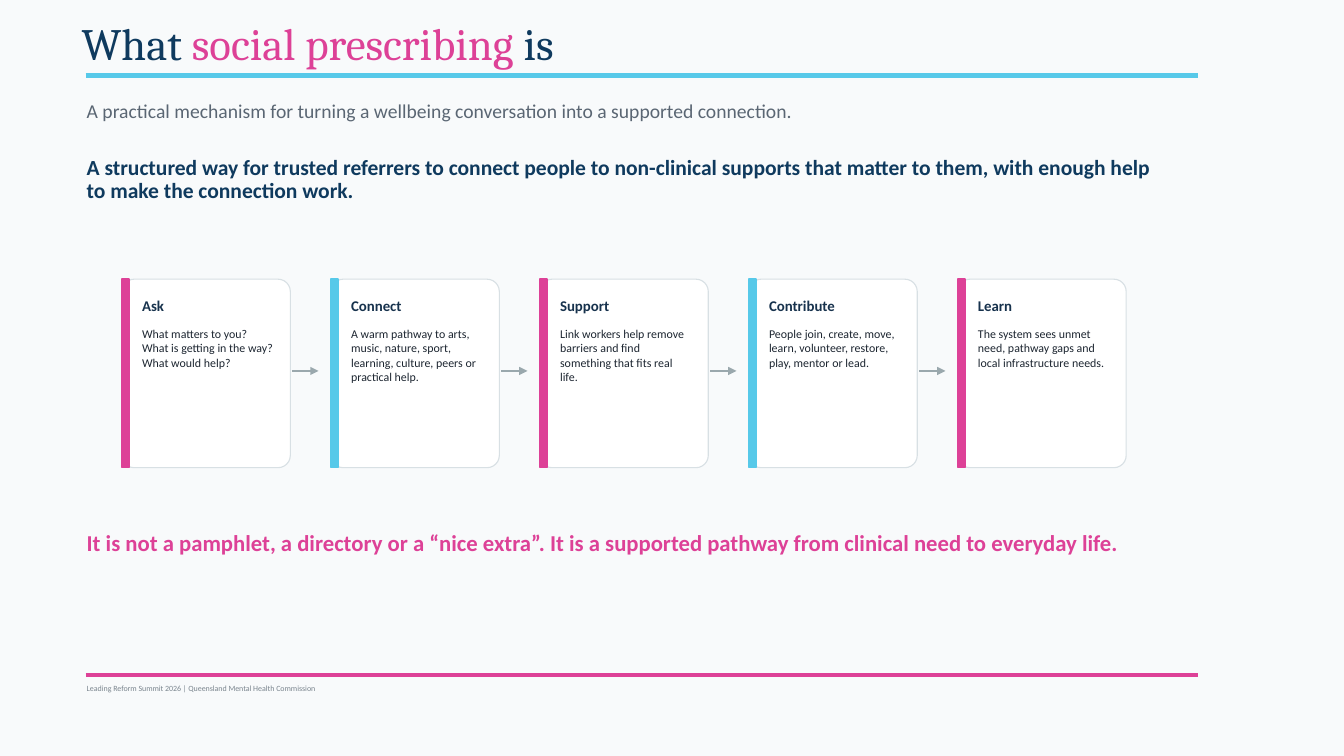
from dataclasses import dataclass

from lxml import etree
from pptx import Presentation
from pptx.dml.color import RGBColor
from pptx.enum.shapes import MSO_CONNECTOR, MSO_SHAPE
from pptx.enum.text import MSO_ANCHOR, MSO_AUTO_SIZE, PP_ALIGN
from pptx.oxml.ns import qn
from pptx.slide import Slide
from pptx.util import Inches, Pt

TOP = MSO_ANCHOR.TOP
MIDDLE = MSO_ANCHOR.MIDDLE
LEFT = PP_ALIGN.LEFT
NO_AUTOFIT = MSO_AUTO_SIZE.NONE
STRAIGHT = MSO_CONNECTOR.STRAIGHT
RECT = MSO_SHAPE.RECTANGLE
ROUND_RECT = MSO_SHAPE.ROUNDED_RECTANGLE


@dataclass(frozen=True)
class Style:
    size: float
    color: str
    bold: bool = False
    spacing: float = 1.0


@dataclass(frozen=True)
class Theme:
    heading_font: str = "Cambria"
    body_font: str = "Calibri"
    background: str = "F8FAFB"
    navy: str = "0F3A5E"
    pink: str = "DD4197"
    cyan: str = "57C9E9"
    card_fill: str = "FFFFFF"
    card_line: str = "D8E0E4"
    arrow: str = "9AA8AD"
    title_size: float = 32
    subtitle: Style = Style(14, "5A6673")
    definition: Style = Style(15.4, "0F3A5E", True, 0.9)
    card_title: Style = Style(10.6, "17324D", True)
    card_body: Style = Style(8.5, "1C2530")
    takeaway: Style = Style(16.2, "DD4197", True)
    footer: Style = Style(5.7, "7A858E")


@dataclass(frozen=True)
class Box:
    left: float
    top: float
    width: float
    height: float

    def emu(self) -> tuple[int, ...]:
        return tuple(Inches(v) for v in (self.left, self.top, self.width, self.height))


@dataclass(frozen=True)
class Step:
    title: str
    body: str


THEME = Theme()
STEPS = [
    Step("Ask", "What matters to you? What is getting in the way? What would help?"),
    Step("Connect", "A warm pathway to arts, music, nature, sport, learning, culture, "
                    "peers or practical help."),
    Step("Support", "Link workers help remove barriers and find something that fits "
                    "real life."),
    Step("Contribute", "People join, create, move, learn, volunteer, restore, play, "
                       "mentor or lead."),
    Step("Learn", "The system sees unmet need, pathway gaps and local infrastructure "
                  "needs."),
]
FIRST_LEFT, LAST_LEFT = 1.21, 9.5
PITCH = (LAST_LEFT - FIRST_LEFT) / (len(STEPS) - 1)
CARD_TOP, CARD_WIDTH, CARD_HEIGHT = 2.77, 1.67, 1.87
ARROW_Y = 3.68


def rgb(color: str) -> RGBColor:
    return RGBColor.from_string(color)


def add_text(s: Slide, box: Box, text: str, style: Style,
             anchor: MSO_ANCHOR = MIDDLE) -> None:
    tf = s.shapes.add_textbox(*box.emu()).text_frame
    tf.margin_left = tf.margin_right = tf.margin_top = tf.margin_bottom = 0
    tf.word_wrap = True
    tf.vertical_anchor = anchor
    tf.text = text
    p = tf.paragraphs[0]
    p.line_spacing = style.spacing
    r = p.runs[0]
    r.font.name = THEME.body_font
    r.font.size = Pt(style.size)
    r.font.bold = style.bold
    r.font.color.rgb = rgb(style.color)


def add_line(s: Slide, x1: float, x2: float, y: float, color: str, width: float,
             arrow: bool = False) -> None:
    line = s.shapes.add_connector(STRAIGHT, Inches(x1), Inches(y), Inches(x2), Inches(y))
    line.line.color.rgb = rgb(color)
    line.line.width = Pt(width)
    if arrow:
        etree.SubElement(line.line._get_or_add_ln(), qn("a:tailEnd"), type="triangle")
    etree.SubElement(line._element.spPr, qn("a:effectLst"))


def add_panel(s: Slide, kind: MSO_SHAPE, box: Box, fill: str, outline: str,
              width: float) -> None:
    sp = s.shapes.add_shape(kind, *box.emu())
    sp.shadow.inherit = False
    sp.fill.solid()
    sp.fill.fore_color.rgb = rgb(fill)
    sp.line.color.rgb = rgb(outline)
    sp.line.width = Pt(width)
    if kind == ROUND_RECT:
        sp.adjustments[0] = 0.073


def add_step(s: Slide, step: Step, left: float, accent: str) -> None:
    add_panel(s, ROUND_RECT, Box(left, CARD_TOP, CARD_WIDTH, CARD_HEIGHT),
              THEME.card_fill, THEME.card_line, 0.8)
    add_panel(s, RECT, Box(left, CARD_TOP, 0.07, CARD_HEIGHT), accent, accent, 1)
    add_text(s, Box(left + 0.2, 2.9, 1.34, 0.26), step.title, THEME.card_title)
    add_text(s, Box(left + 0.2, 3.24, 1.3, 1.28), step.body, THEME.card_body, TOP)


def set_title(s: Slide) -> None:
    sp = s.shapes.title
    sp.left, sp.top, sp.width, sp.height = Box(0.71, 0.17, 10.66, 0.53).emu()
    tf = sp.text_frame
    tf.auto_size = NO_AUTOFIT
    tf.vertical_anchor = TOP
    p = tf.paragraphs[0]
    p.alignment = LEFT
    p.line_spacing = 0.9
    for text, color in (("What ", THEME.navy), ("social prescribing ", THEME.pink),
                        ("is", THEME.navy)):
        r = p.add_run()
        r.text = text
        r.font.name = THEME.heading_font
        r.font.size = Pt(THEME.title_size)
        r.font.color.rgb = rgb(color)


def main() -> None:
    prs = Presentation()
    prs.slide_width, prs.slide_height = Inches(13.33), Inches(7.5)
    s = prs.slides.add_slide(prs.slide_layouts[5])
    s.background.fill.solid()
    s.background.fill.fore_color.rgb = rgb(THEME.background)

    set_title(s)
    add_line(s, 0.85, 11.88, 0.75, THEME.cyan, 3)
    add_line(s, 0.85, 11.88, 6.7, THEME.pink, 3)
    add_text(s, Box(0.86, 0.95, 10.18, 0.29),
             "A practical mechanism for turning a wellbeing conversation into a "
             "supported connection.", THEME.subtitle)
    add_text(s, Box(0.86, 1.55, 10.66, 0.47),
             "A structured way for trusted referrers to connect people to non-clinical "
             "supports that matter to them, with enough help to make the connection work.",
             THEME.definition)

    for i, step in enumerate(STEPS):
        left = FIRST_LEFT + i * PITCH
        add_step(s, step, left, THEME.cyan if i % 2 else THEME.pink)
        if i < len(STEPS) - 1:
            start = left + CARD_WIDTH + 0.02
            add_line(s, start, start + 0.26, ARROW_Y, THEME.arrow, 1.6, arrow=True)

    add_text(s, Box(0.86, 4.89, 10.81, 0.99),
             "It is not a pamphlet, a directory or a “nice extra”. It is a supported "
             "pathway from clinical need to everyday life.", THEME.takeaway)
    add_text(s, Box(0.86, 6.75, 6.5, 0.16),
             "Leading Reform Summit 2026 | Queensland Mental Health Commission",
             THEME.footer)
    prs.save("out.pptx")


if __name__ == "__main__":
    main()
